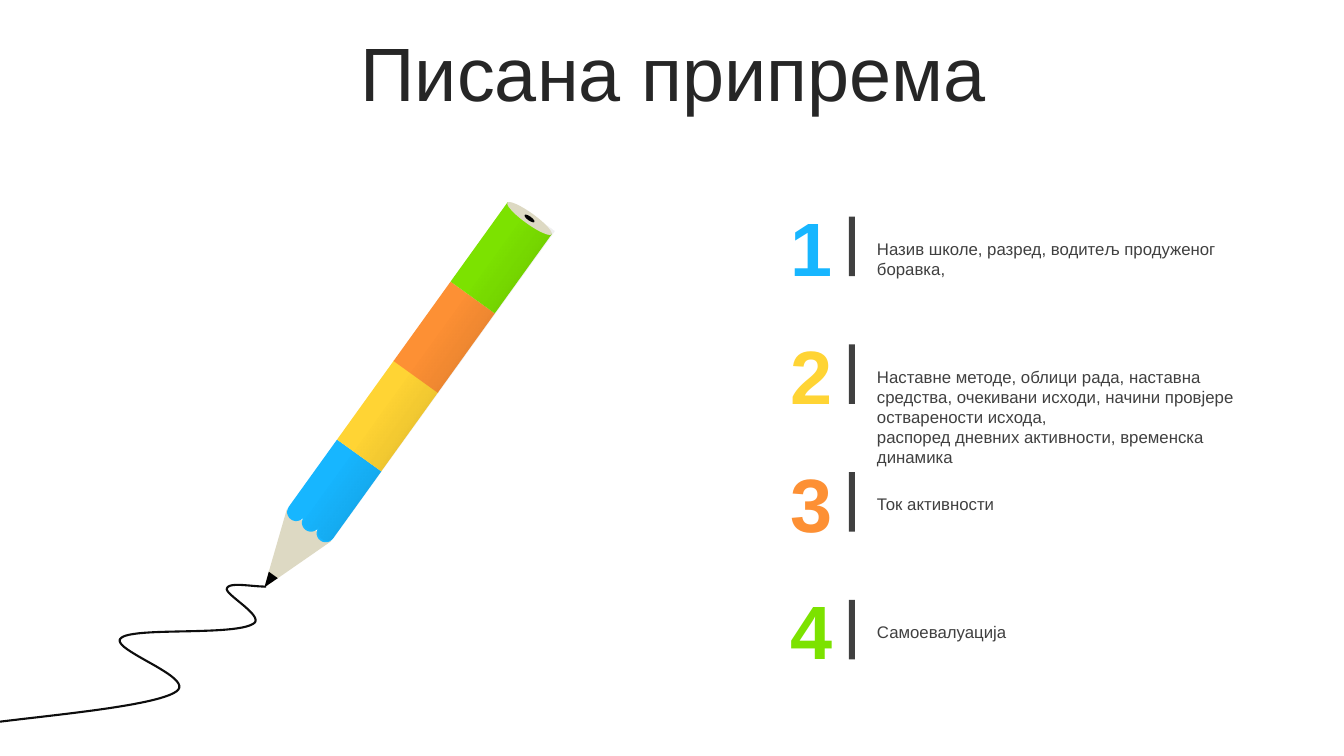
from math import cos, pi, radians, sin

from lxml.etree import SubElement
from pptx import Presentation
from pptx.dml.color import RGBColor
from pptx.enum.shapes import MSO_SHAPE as Preset
from pptx.enum.text import MSO_ANCHOR as Anchor, MSO_AUTO_SIZE as AutoSize, PP_ALIGN as Align
from pptx.oxml.ns import qn
from pptx.util import Inches, Pt

BLUE = RGBColor(0x17, 0xB6, 0xFF)
YELLOW = RGBColor(0xFF, 0xD4, 0x34)
ORANGE = RGBColor(0xFD, 0x90, 0x34)
GREEN = RGBColor(0x7C, 0xE2, 0x00)
WOOD = RGBColor(0xDD, 0xD9, 0xC3)
BLACK = RGBColor(0, 0, 0)
INK = RGBColor(0x0D, 0x0D, 0x0D)
TITLE_GRAY = RGBColor(0x26, 0x26, 0x26)
TEXT_GRAY = RGBColor(0x40, 0x40, 0x40)

presentation = Presentation()
presentation.slide_width, presentation.slide_height = Inches(13.33), Inches(7.5)
slide = presentation.slides.add_slide(presentation.slide_layouts[6])
shapes = slide.shapes


def add_text(box, lines, font, margins=None, **frame_format):
    """Add a wrapped text box with one paragraph per line."""
    frame = shapes.add_textbox(*map(Inches, box)).text_frame
    frame.word_wrap = True
    for name, value in {**(margins or {}), **frame_format}.items():
        setattr(frame, name, value)
    frame.text = "\n".join(lines)
    for paragraph in frame.paragraphs:
        for name, value in font.items():
            if name == "color":
                paragraph.runs[0].font.color.rgb = value
            else:
                setattr(paragraph.runs[0].font, name, value)
    return frame


def add_outline(points, closed=True):
    """Build a freeform from points given in inches."""
    corners = [(Inches(x), Inches(y)) for x, y in points]
    builder = shapes.build_freeform(*corners[0])
    builder.add_line_segments(corners[1:], close=closed)
    return builder.convert_to_shape()


# Title
title = add_text((0.35, 0.37, 12.66, 0.79), ["Писана припрема"],
                 {"name": "Arial", "size": Pt(54), "color": TITLE_GRAY},
                 vertical_anchor=Anchor.MIDDLE)
title.paragraphs[0].alignment = Align.CENTER
title.paragraphs[0].line_spacing = 0.9

# Numbered list
items = [
    (BLUE, 0.5, ["Назив школе, разред, водитељ продуженог боравка,"]),
    (YELLOW, 1.31, ["Наставне методе, облици рада, наставна средства, очекивани исходи, "
                    "начини провјере остварености исхода,",
                    "распоред дневних активности, временска динамика"]),
    (ORANGE, 0.3, ["Ток активности"]),
    (GREEN, 0.3, ["Самоевалуација"]),
]
no_margins = {f"margin_{side}": 0 for side in ("left", "right", "top", "bottom")}
for index, (color, height, lines) in enumerate(items):
    top = 1.99 + 1.267 * index
    add_text((7.84, top, 0.47, 0.91), [str(index + 1)],
             {"name": "Arial", "size": Pt(54), "bold": True, "color": color},
             no_margins, vertical_anchor=Anchor.MIDDLE,
             auto_size=AutoSize.SHAPE_TO_FIT_TEXT)
    add_text((8.6, top + 0.33, 3.76, height), lines,
             {"name": "Arial", "size": Pt(12), "color": TEXT_GRAY},
             auto_size=AutoSize.SHAPE_TO_FIT_TEXT)
    bar = shapes.add_shape(Preset.RECTANGLE, Inches(8.42), Inches(top + 0.16),
                           Inches(0.06), Inches(0.59))
    bar.fill.solid()
    bar.fill.fore_color.rgb = TEXT_GRAY
    bar.line.fill.background()
    bar.shadow.inherit = False

# Pencil outlines, drawn upright with the tip at the top
WIDTH = 0.54
BODY_TURN, BAND_TURN = 215.7, 305.7
radius = WIDTH / 6
scallops = [(radius * (2 * bump + 1 - cos(pi * step / 12)), radius * (1 - sin(pi * step / 12)))
            for bump in range(3) for step in range(13)]
blue_end = scallops + [(WIDTH, 0.91), (0, 0.91)]
shade = scallops + [(WIDTH, 3.82), (0, 3.82)]
lead = [(0, 0.15), (0.055, 0), (0.11, 0.15)]

# Pencil parts: outline or preset, size, distance of the centre from the tip, turn, colour
parts = [
    (Preset.ISOSCELES_TRIANGLE, (WIDTH, 0.76), 0.38, BODY_TURN, WOOD),
    (blue_end, (WIDTH, 0.91), 1.16, BODY_TURN, BLUE),
    (Preset.RECTANGLE, (0.97, WIDTH), 2.1, BAND_TURN, YELLOW),
    (Preset.RECTANGLE, (0.97, WIDTH), 3.06, BAND_TURN, ORANGE),
    (Preset.RECTANGLE, (0.97, WIDTH), 4.03, BAND_TURN, GREEN),
    (lead, (0.11, 0.15), 0.08, BODY_TURN, BLACK),
    (shade, (WIDTH, 3.82), 2.64, BODY_TURN, None),
    (Preset.OVAL, (0.11, WIDTH), 4.51, BAND_TURN, WOOD),
    (Preset.OVAL, (0.04, 0.12), 4.51, BAND_TURN, BLACK),
]
tip_x, tip_y = 2.62, 5.83
axis = radians(BODY_TURN)
for outline, (width, height), distance, turn, color in parts:
    if isinstance(outline, list):
        shape = add_outline(outline)
    else:
        shape = shapes.add_shape(outline, 0, 0, Inches(width), Inches(height))
    shape.left = Inches(tip_x - distance * sin(axis) - width / 2)
    shape.top = Inches(tip_y + distance * cos(axis) - height / 2)
    shape.rotation = turn
    shape.line.fill.background()
    shape.shadow.inherit = False
    if color is not None:
        shape.fill.solid()
        shape.fill.fore_color.rgb = color
        continue
    # Shading fades from clear to translucent black
    shape.fill.gradient()
    shape.fill.gradient_angle = 180
    for stop, position in zip(shape.fill.gradient_stops, (0.48, 1)):
        stop.color.rgb = BLACK
        stop.position = position
    for element, alpha in zip(shape._element.spPr.iter(qn("a:srgbClr")), (0, 39000)):
        SubElement(element, qn("a:alpha")).set("val", str(alpha))

# Scribble: Bezier curves, each starting where the last one ends
curves = [
    ((2.49, 5.82), (2.27, 5.77), (2.25, 5.84)),
    ((2.23, 5.9), (2.64, 6.12), (2.51, 6.19)),
    ((2.31, 6.31), (1.32, 6.22), (1.2, 6.33)),
    ((1.07, 6.44), (1.95, 6.72), (1.75, 6.86)),
    ((1.55, 7), (0.56, 7.09), (0, 7.16)),
]
scribble_points = [(2.64, 5.82)]
for first, second, end in curves:
    start = scribble_points[-1]
    for step in range(1, 25):
        t = step / 24
        weights = ((1 - t) ** 3, 3 * t * (1 - t) ** 2, 3 * t * t * (1 - t), t ** 3)
        scribble_points.append(tuple(sum(weight * value for weight, value in zip(weights, values))
                                     for values in zip(start, first, second, end)))
scribble = add_outline(scribble_points, closed=False)
scribble.fill.background()
scribble.line.color.rgb = INK
scribble.line.width = Pt(1.5)
scribble.shadow.inherit = False

presentation.save("out.pptx")
